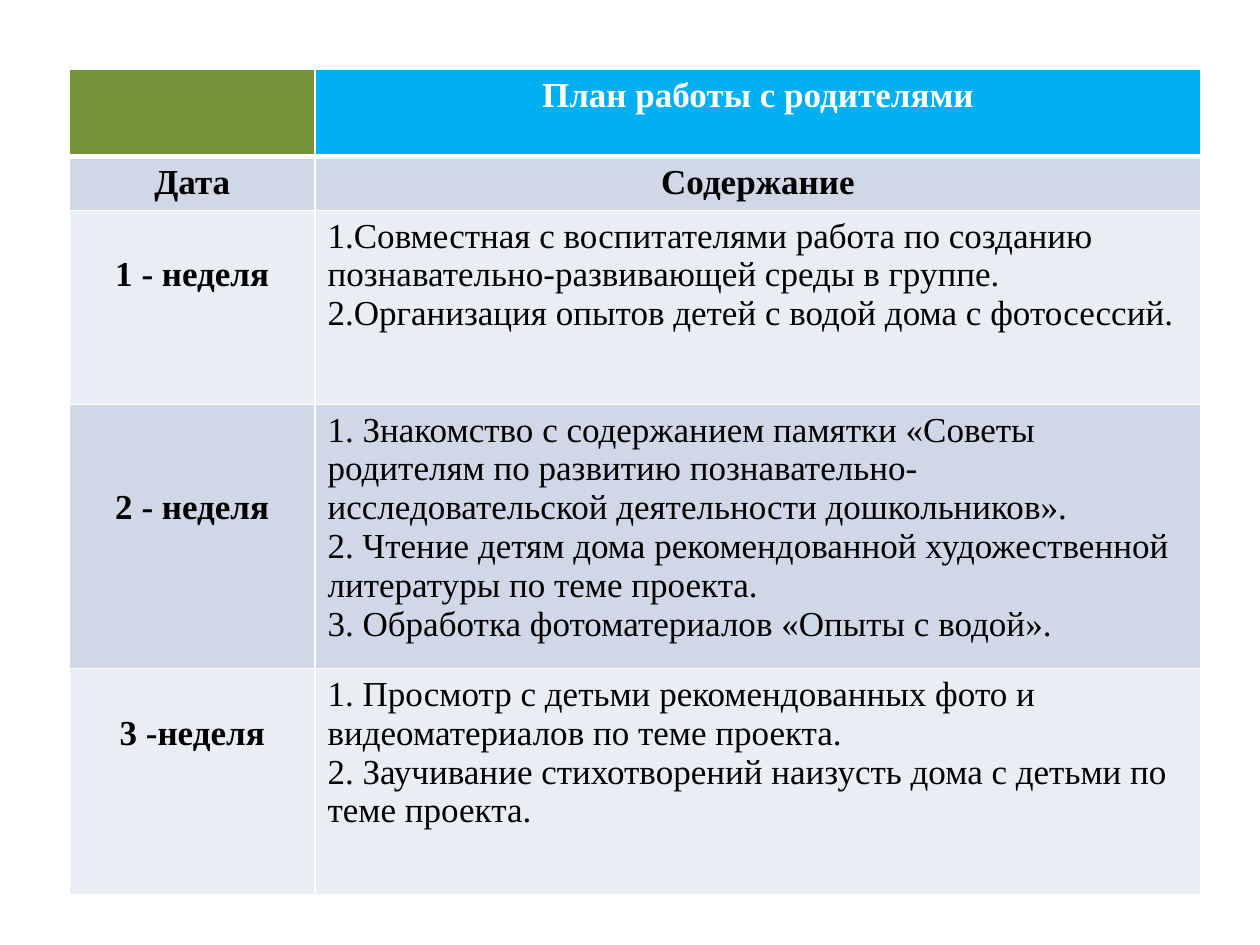
import pptx
import pptx.dml.color
import pptx.enum.text
import pptx.oxml
import pptx.oxml.ns
import pptx.util
from dataclasses import dataclass

Cm = pptx.util.Cm
Pt = pptx.util.Pt
RGB = pptx.dml.color.RGBColor.from_string
CENTER = pptx.enum.text.PP_ALIGN.CENTER
LEFT = pptx.enum.text.PP_ALIGN.LEFT


@dataclass(frozen=True)
class Theme:
    font: str = "Times New Roman"
    size: int = 20
    corner: str = "77933C"
    header: str = "00B0F0"
    dark_band: str = "D0D8E8"
    light_band: str = "E9EDF4"
    text: str = "000000"
    header_text: str = "FFFFFF"
    border: str = "FFFFFF"
    thin: int = 1
    thick: int = 3
    margin_top: float = 0.13
    line_height: float = 0.78


class SlideBuilder:
    def __init__(self, prs, theme):
        self.theme = theme
        self.slide = prs.slides.add_slide(prs.slide_layouts[6])

    def table(self, left, top, widths, heights):
        frame = self.slide.shapes.add_table(
            len(heights), len(widths), Cm(left), Cm(top),
            Cm(sum(widths)), Cm(sum(heights)))
        table = frame.table
        table.first_row = table.horz_banding = False
        for col, width in zip(table.columns, widths):
            col.width = Cm(width)
        for row, height in zip(table.rows, heights):
            row.height = Cm(height)
        return table

    def borders(self, cell, **widths):
        """Draw the four cell edges; widths override the thin line by side."""
        tcPr = cell._tc.get_or_add_tcPr()
        for i, side in enumerate("LRTB"):
            width = Pt(widths.get(side, self.theme.thin))
            tcPr.insert(i, pptx.oxml.parse_xml(
                f'<a:ln{side} {pptx.oxml.ns.nsdecls("a")} w="{width}"><a:solidFill>'
                f'<a:srgbClr val="{self.theme.border}"/></a:solidFill></a:ln{side}>'))

    def cell(self, cell, lines, fill, color, bold=True, align=CENTER, skip=0):
        """Fill a cell; skip lowers its text by that many lines."""
        t = self.theme
        cell.fill.solid()
        cell.fill.fore_color.rgb = RGB(fill)
        cell.margin_top = Cm(t.margin_top + skip * t.line_height)
        tf = cell.text_frame
        for i, line in enumerate(lines):
            p = tf.paragraphs[0] if i == 0 else tf.add_paragraph()
            p.alignment = align
            r = p.add_run()
            r.text = line
            for name, value in {"name": t.font, "size": Pt(t.size), "bold": bold}.items():
                setattr(r.font, name, value)
            r.font.color.rgb = RGB(color)


WEEKS = [
    ("1 - неделя", 1, [
        "1.Совместная с воспитателями работа по созданию познавательно-развивающей среды в группе.",
        "2.Организация опытов детей с водой дома с фотосессий."]),
    ("2 - неделя", 2, [
        "1. Знакомство с содержанием памятки «Советы родителям по развитию "
        "познавательно-исследовательской деятельности дошкольников».",
        "2. Чтение детям дома рекомендованной художественной литературы по теме проекта.",
        "3. Обработка фотоматериалов «Опыты с водой»."]),
    ("3 -неделя", 1, [
        "1. Просмотр с детьми рекомендованных фото и видеоматериалов по теме проекта.",
        "2. Заучивание стихотворений наизусть дома с детьми по теме проекта."]),
]


def main():
    prs = pptx.Presentation()
    prs.slide_width, prs.slide_height = Cm(25.4), Cm(19.05)
    theme = Theme()
    s = SlideBuilder(prs, theme)
    table = s.table(1.4, 1.4, [4.95, 17.86], [1.75, 1.09, 3.91, 5.33, 4.55])

    s.cell(table.cell(0, 0), [], theme.corner, theme.header_text)
    s.cell(table.cell(0, 1), ["План работы с родителями"], theme.header, theme.header_text)
    for col, title in enumerate(["Дата", "Содержание"]):
        s.cell(table.cell(1, col), [title], theme.dark_band, theme.text)
        s.borders(table.cell(0, col), B=theme.thick)
        s.borders(table.cell(1, col), T=theme.thick)

    for row, (week, skip, tasks) in enumerate(WEEKS, start=2):
        band = theme.dark_band if row % 2 else theme.light_band
        s.cell(table.cell(row, 0), [week], band, theme.text, skip=skip)
        s.cell(table.cell(row, 1), tasks, band, theme.text, bold=False, align=LEFT)
        for col in range(2):
            s.borders(table.cell(row, col))

    prs.save("out.pptx")


if __name__ == "__main__":
    main()
